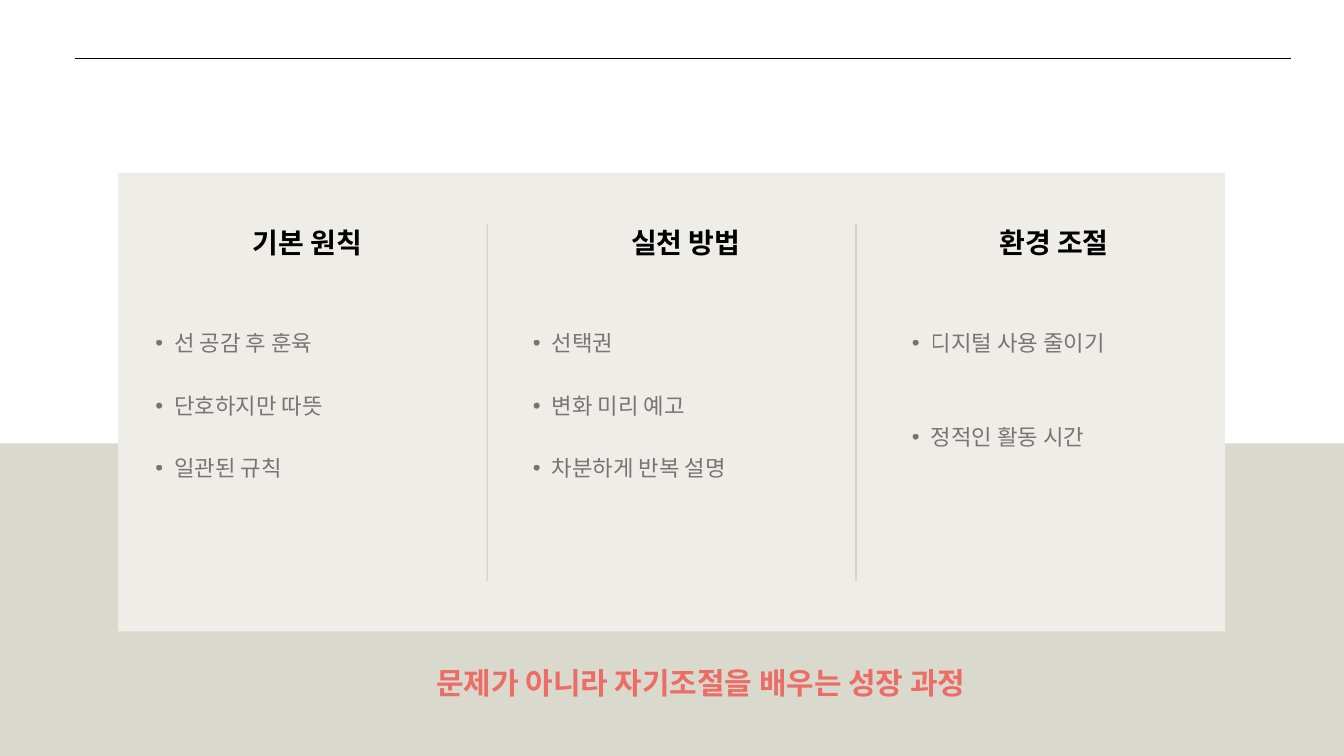
from lxml import etree
from pptx import Presentation
from pptx.dml.color import RGBColor
from pptx.enum.shapes import MSO_CONNECTOR, MSO_SHAPE
from pptx.enum.text import MSO_ANCHOR, MSO_AUTO_SIZE, PP_ALIGN
from pptx.oxml.ns import qn
from pptx.util import Cm, Pt

STRAIGHT = MSO_CONNECTOR.STRAIGHT
RECTANGLE = MSO_SHAPE.RECTANGLE
CENTER, JUSTIFY = PP_ALIGN.CENTER, PP_ALIGN.JUSTIFY
TOP = MSO_ANCHOR.TOP
NO_AUTOFIT = MSO_AUTO_SIZE.NONE

# Content: heading, heading left, list left, gap between items in lines, items
COLUMNS = [
    ("기본 원칙", 7.52, 5.16, 1, ["선 공감 후 훈육", "단호하지만 따뜻", "일관된 규칙"]),
    ("실천 방법", 21.82, 19.43, 1, ["선택권", "변화 미리 예고", "차분하게 반복 설명"]),
    ("환경 조절", 35.74, 33.76, 2, ["디지털 사용 줄이기", "정적인 활동 시간"]),
]
MESSAGE = "문제가 아니라 자기조절을 배우는 성장 과정"

# Style and layout, in centimetres and points
FONT = "Noto Sans"
BLACK, RED, SAND, CARD = "000000", "FF0000", "DAD9CE", "EEEDE8"
SLIDE_WIDTH, SLIDE_HEIGHT = 50.8, 28.58
BAND_TOP = 16.76
CARD_LEFT, CARD_TOP, CARD_WIDTH, CARD_HEIGHT = 4.47, 6.55, 41.83, 17.32
DIVIDER_TOP, DIVIDER_BOTTOM = 8.46, 21.97
LIST_LINE = 33.5


def rgb(color):
    return RGBColor.from_string(color)


def set_alpha(element, percent):
    color = element.find(".//" + qn("a:srgbClr"))
    etree.SubElement(color, qn("a:alpha")).set("val", str(percent * 1000))


def add_panel(left, top, width, height, color, depth):
    shape = slide.shapes.add_shape(RECTANGLE, Cm(left), Cm(top), Cm(width), Cm(height))
    shape.shadow.inherit = False
    shape.fill.solid()
    shape.fill.fore_color.rgb = rgb(color)
    shape.line.fill.background()
    # Behind the placeholders
    slide.shapes._spTree.insert(2 + depth, shape._element)


def add_line(x1, y1, x2, y2, alpha=100):
    line = slide.shapes.add_connector(STRAIGHT, Cm(x1), Cm(y1), Cm(x2), Cm(y2))
    line.line.color.rgb = rgb(BLACK)
    line.line.width = Pt(0.75)
    properties = line._element.spPr
    if alpha < 100:
        set_alpha(properties, alpha)
    etree.SubElement(properties, qn("a:effectLst"))


def add_bullet(paragraph):
    properties = paragraph._p.get_or_add_pPr()
    properties.set("marL", str(Cm(1.42)))
    properties.set("indent", str(-Cm(0.71)))
    etree.SubElement(properties, qn("a:buFont")).set("typeface", "Arial")
    etree.SubElement(properties, qn("a:buChar")).set("char", "•")


def fill_text(shape, box, lines, size, spacing, color, alpha=100,
              bold=False, align=CENTER, bullets=False, gap=0):
    shape.left, shape.top, shape.width, shape.height = map(Cm, box)
    frame = shape.text_frame
    frame.margin_left = frame.margin_top = frame.margin_right = frame.margin_bottom = 0
    frame.word_wrap = True
    frame.auto_size = NO_AUTOFIT
    frame.vertical_anchor = TOP
    frame.text = "\n".join(lines)
    for index, paragraph in enumerate(frame.paragraphs):
        paragraph.alignment = align
        paragraph.line_spacing = Pt(spacing)
        paragraph.space_before = Pt(gap if index else 0)
        paragraph.space_after = Pt(0)
        if bullets:
            add_bullet(paragraph)
        font = paragraph.font
        font.name, font.size, font.bold = FONT, Pt(size), bold
        font.color.rgb = rgb(color)
        if alpha < 100:
            set_alpha(paragraph._p, alpha)


presentation = Presentation()
presentation.slide_width = Cm(SLIDE_WIDTH)
presentation.slide_height = Cm(SLIDE_HEIGHT)
slide = presentation.slides.add_slide(presentation.slide_layouts.get_by_name("Comparison"))
bodies = list(slide.placeholders)[1:]

# Background band and card
add_panel(0, BAND_TOP, SLIDE_WIDTH, SLIDE_HEIGHT - BAND_TOP, SAND, 0)
add_panel(CARD_LEFT, CARD_TOP, CARD_WIDTH, CARD_HEIGHT, CARD, 1)

# Column dividers and top rule
for number in range(1, len(COLUMNS)):
    x = CARD_LEFT + CARD_WIDTH * number / len(COLUMNS)
    add_line(x, DIVIDER_TOP, x, DIVIDER_BOTTOM, alpha=30)
add_line(2.84, 2.21, 48.79, 2.21)

# Columns: heading and bullet list
for body, (heading, heading_left, list_left, gap_lines, items) in zip(bodies, COLUMNS):
    fill_text(body, (list_left, 12.29, 12.95, 5.77), items, 23.9, LIST_LINE, BLACK,
              alpha=50, align=JUSTIFY, bullets=True, gap=gap_lines * LIST_LINE)
    heading_box = slide.shapes.add_textbox(0, 0, 0, 0)
    fill_text(heading_box, (heading_left, 8.31, 8.2, 1.42), [heading], 30, 42, BLACK, bold=True)

# Closing message
fill_text(slide.shapes.title, (9.96, 24.89, 33.07, 1.5), [MESSAGE], 32.1, 44.9, RED,
          alpha=50, bold=True)

# Unused placeholders
for body in bodies[len(COLUMNS):]:
    body._element.getparent().remove(body._element)

presentation.save("out.pptx")
